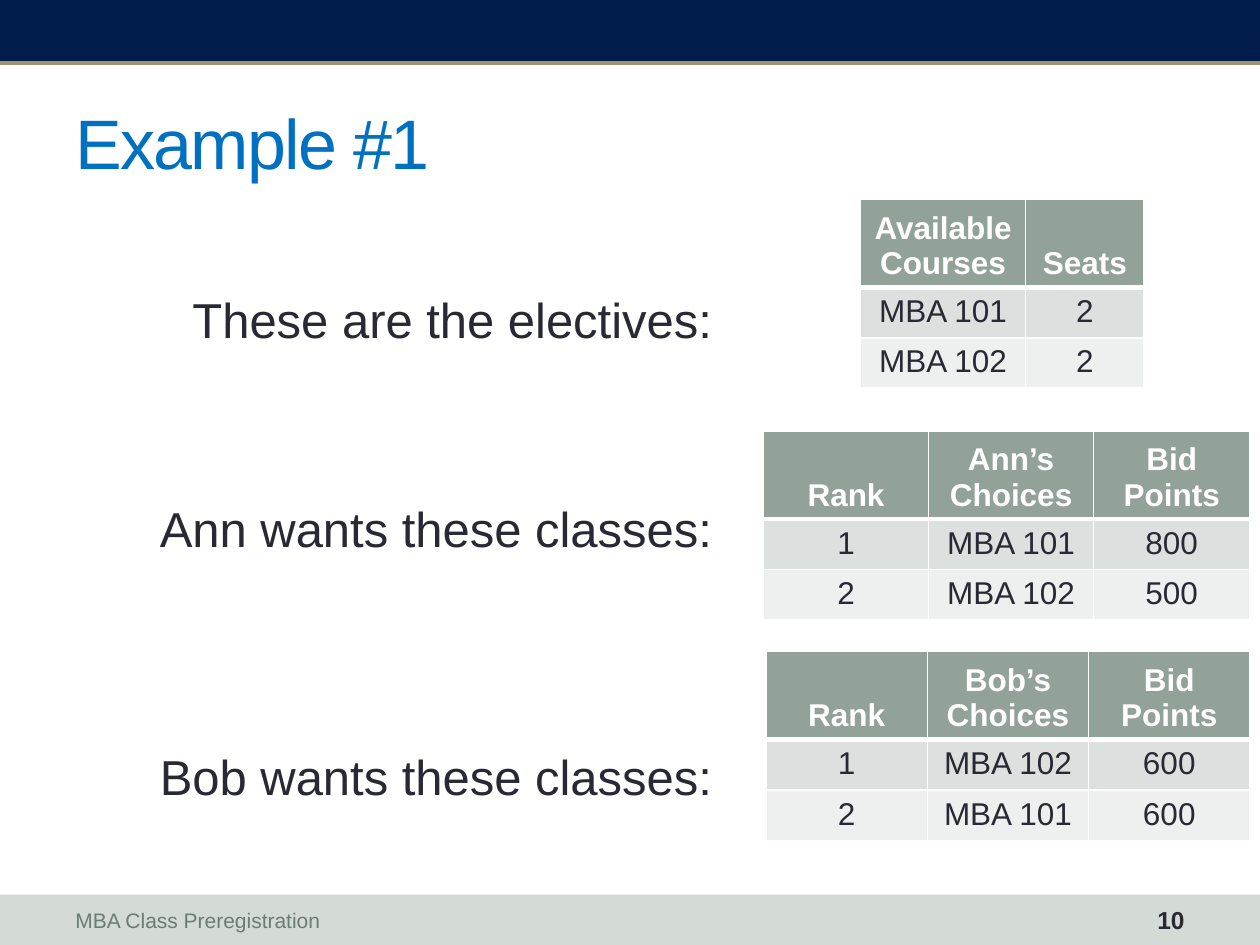
import dataclasses

import lxml.etree
import pptx
import pptx.dml.color
import pptx.enum.shapes
import pptx.enum.text
import pptx.oxml.ns
import pptx.util
from pptx.util import Inches

ALIGN = pptx.enum.text.PP_ALIGN
ANCHOR = pptx.enum.text.MSO_ANCHOR


@dataclasses.dataclass(frozen=True)
class Theme:
    """Colours and type sizes of the slide."""
    font: str = "Arial"
    navy: str = "001C4A"
    tan: str = "A69073"
    footer_fill: str = "D4DAD6"
    footer_text: str = "6B7D72"
    title: str = "0070C0"
    text: str = "292934"
    white: str = "FFFFFF"
    header: str = "93A299"
    rows: tuple = ("DCE0DE", "EEF0EF")
    title_size: int = 40
    body_size: int = 28
    table_size: int = 18
    number_size: int = 14
    footer_size: int = 12


THEME = Theme()


def rgb(value):
    """Return the colour object for a hex value."""
    return pptx.dml.color.RGBColor.from_string(value)


def add_xml(parent, tag, **attributes):
    """Append a DrawingML element and return it."""
    return lxml.etree.SubElement(parent, pptx.oxml.ns.qn(tag), attributes)


def format_text(text_frame, size, color, align, anchor, bold=False):
    """Format every paragraph and run of a text frame."""
    text_frame.word_wrap = True
    text_frame.vertical_anchor = anchor
    for paragraph in text_frame.paragraphs:
        paragraph.alignment = align
        for run in paragraph.runs:
            run.font.name = THEME.font
            run.font.size = pptx.util.Pt(size)
            run.font.bold = bold
            run.font.color.rgb = rgb(color)


def place(shape, box):
    """Move a shape to a box of left, top, width and height."""
    shape.left, shape.top, shape.width, shape.height = map(Inches, box)


def add_band(slide, box, color):
    """Add a plain filled band."""
    shape = slide.shapes.add_shape(
        pptx.enum.shapes.MSO_SHAPE.RECTANGLE, *map(Inches, box))
    shape.shadow.inherit = False
    shape.fill.solid()
    shape.fill.fore_color.rgb = rgb(color)
    shape.line.fill.background()


def add_header_band(slide, box):
    """Add the top band with the rule along its lower edge."""
    add_band(slide, box, THEME.navy)
    left, top, width, height = box
    bottom = Inches(top + height)
    rule = slide.shapes.add_connector(
        pptx.enum.shapes.MSO_CONNECTOR.STRAIGHT,
        Inches(left), bottom, Inches(left + width), bottom)
    rule.line.color.rgb = rgb(THEME.tan)
    rule.line.width = pptx.util.Pt(2)
    add_xml(rule._element.spPr, "a:effectLst")


def add_label(slide, box, text, size, color, align, bold=False):
    """Add one line of footer text."""
    text_frame = slide.shapes.add_textbox(*map(Inches, box)).text_frame
    text_frame.text = text
    format_text(text_frame, size, color, align, ANCHOR.MIDDLE, bold)


def add_footer(slide, box, text, number):
    """Add the bottom band with the footer text and slide number."""
    add_band(slide, box, THEME.footer_fill)
    left, top, width, height = box
    top, height = top + 0.02, height - 0.04
    add_label(slide, (left + 0.5, top, 6.67, height), text,
              THEME.footer_size, THEME.footer_text, ALIGN.LEFT)
    add_label(slide, (left + width - 1.25, top, 0.75, height), number,
              THEME.number_size, THEME.text, ALIGN.RIGHT, True)


def fill_title(slide, box, text):
    """Fill the title placeholder."""
    title = slide.shapes.title
    place(title, box)
    title.text_frame.text = text
    format_text(title.text_frame, THEME.title_size, THEME.title,
                ALIGN.LEFT, ANCHOR.MIDDLE)
    title.text_frame.paragraphs[0].runs[0]._r.get_or_add_rPr().set("spc", "-100")


def fill_body(slide, box, captions):
    """Fill the body placeholder with captions and the space before each."""
    body = slide.placeholders[1]
    place(body, box)
    text_frame = body.text_frame
    text_frame.text = "\n".join(caption for caption, space in captions)
    text_frame.auto_size = pptx.enum.text.MSO_AUTO_SIZE.NONE
    text_frame.margin_top = Inches(0.63)
    for paragraph, (caption, space) in zip(text_frame.paragraphs, captions):
        properties = paragraph._p.get_or_add_pPr()
        properties.set("marL", "0")
        properties.set("indent", "0")
        add_xml(properties, "a:buNone")
        paragraph.space_before = pptx.util.Pt(space)
    format_text(text_frame, THEME.body_size, THEME.text, ALIGN.RIGHT, ANCHOR.TOP)


def add_borders(cell, bottom_width):
    """Draw white borders round a cell."""
    properties = cell._tc.get_or_add_tcPr()
    for side, width in zip("LRTB", (1, 1, 1, bottom_width)):
        line = add_xml(properties, f"a:ln{side}", w=str(pptx.util.Pt(width)))
        fill = add_xml(line, "a:solidFill")
        add_xml(fill, "a:srgbClr", val=THEME.white)


def add_course_table(slide, left, top, widths, records):
    """Add a table whose first record is the header."""
    heights = [0.67] + [0.38] * (len(records) - 1)
    table = slide.shapes.add_table(
        len(records), len(widths), Inches(left), Inches(top),
        Inches(sum(widths)), Inches(sum(heights))).table
    for column, width in zip(table.columns, widths):
        column.width = Inches(width)
    for index, (height, record) in enumerate(zip(heights, records)):
        table.rows[index].height = Inches(height)
        header = index == 0
        fill = THEME.header if header else THEME.rows[(index - 1) % 2]
        color = THEME.white if header else THEME.text
        for cell, text in zip(table.rows[index].cells, record):
            cell.text_frame.text = text
            format_text(cell.text_frame, THEME.table_size, color,
                        ALIGN.CENTER, ANCHOR.TOP, header)
            cell.vertical_anchor = ANCHOR.BOTTOM if header else ANCHOR.TOP
            add_borders(cell, 3 if header else 1)
            cell.fill.solid()
            cell.fill.fore_color.rgb = rgb(fill)


def main():
    """Build and save the slide."""
    presentation = pptx.Presentation()
    presentation.slide_width = Inches(10)
    presentation.slide_height = Inches(7.5)
    slide = presentation.slides.add_slide(presentation.slide_layouts[1])
    add_footer(slide, (0, 7.1, 10, 0.4), "MBA Class Preregistration", "10")
    add_header_band(slide, (0, 0, 10, 0.5))
    fill_title(slide, (0.5, 0.58, 9, 1.08), "Example #1")
    fill_body(slide, (0.5, 1.67, 5.25, 5.42), [
        ("These are the electives:", 0),
        ("Ann wants these classes:", 85.5),
        ("Bob wants these classes:", 108.4)])
    add_course_table(slide, 6.83, 1.58, (1.31, 0.94), [
        ("Available Courses", "Seats"), ("MBA 101", "2"), ("MBA 102", "2")])
    add_course_table(slide, 6.06, 3.42, (1.31, 1.31, 1.24), [
        ("Rank", "Ann’s\nChoices", "Bid Points"),
        ("1", "MBA 101", "800"), ("2", "MBA 102", "500")])
    add_course_table(slide, 6.08, 5.17, (1.28, 1.28, 1.28), [
        ("Rank", "Bob’s Choices", "Bid Points"),
        ("1", "MBA 102", "600"), ("2", "MBA 101", "600")])
    presentation.save("out.pptx")


if __name__ == "__main__":
    main()
